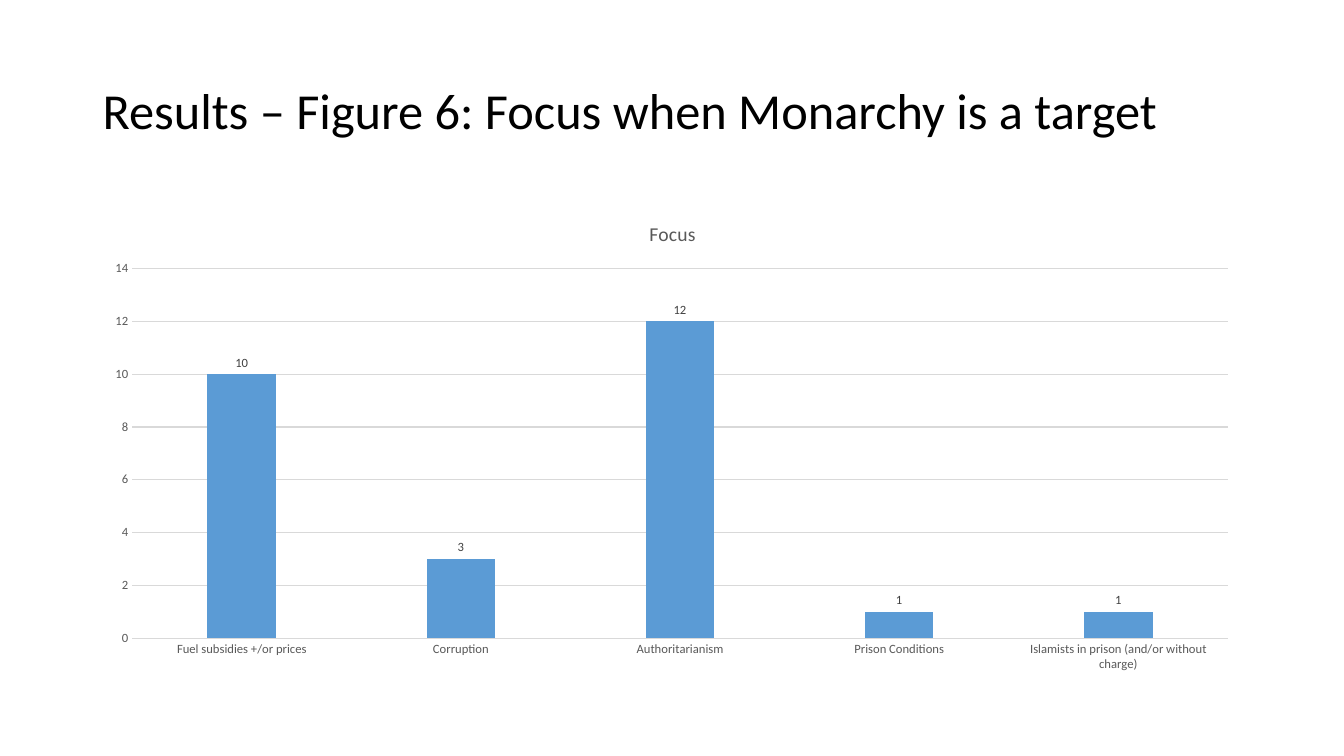
from lxml import etree
from pptx import Presentation
from pptx.chart.data import CategoryChartData
from pptx.dml.color import RGBColor
from pptx.enum import chart as ch, text as tx
from pptx.oxml.ns import qn
from pptx.util import Inches, Pt

BLACK = RGBColor(0x00, 0x00, 0x00)
LABEL_GRAY = RGBColor(0x40, 0x40, 0x40)
AXIS_GRAY = RGBColor(0x59, 0x59, 0x59)
GRID_GRAY = RGBColor(0xD9, 0xD9, 0xD9)
BAR_BLUE = RGBColor(0x5B, 0x9B, 0xD5)

FOCUS_COUNTS = {
    "Fuel subsidies +/or prices": 10,
    "Corruption": 3,
    "Authoritarianism": 12,
    "Prison Conditions": 1,
    "Islamists in prison (and/or without charge)": 1,
}
LEFT, WIDTH = Inches(0.92), Inches(11.5)


def style_font(font, size, color):
    font.name = "Calibri"
    font.size = Pt(size)
    font.bold = False
    font.color.rgb = color


def style_line(line):
    line.color.rgb = GRID_GRAY
    line.width = Pt(0.75)


prs = Presentation()
prs.slide_width, prs.slide_height = Inches(13.33), Inches(7.5)
slide = prs.slides.add_slide(prs.slide_layouts[6])

# Heading
heading = slide.shapes.add_textbox(LEFT, Inches(0.4), WIDTH, Inches(1.45)).text_frame
heading.word_wrap = True
heading.vertical_anchor = tx.MSO_ANCHOR.MIDDLE
heading.text = "Results – Figure 6: Focus when Monarchy is a target"
heading.paragraphs[0].line_spacing = 0.9
style_font(heading.paragraphs[0].runs[0].font, 36, BLACK)

# Focus chart
focus_data = CategoryChartData()
focus_data.categories = list(FOCUS_COUNTS)
focus_data.add_series("Series 1", list(FOCUS_COUNTS.values()))
focus = slide.shapes.add_chart(
    ch.XL_CHART_TYPE.COLUMN_CLUSTERED, LEFT, Inches(2), WIDTH, Inches(4.76), focus_data
).chart
style_font(focus.font, 10, BLACK)
focus.has_legend = False
focus.has_title = True
focus_title = focus.chart_title.text_frame
focus_title.text = "Focus"
style_font(focus_title.paragraphs[0].runs[0].font, 14, AXIS_GRAY)

# Bars and their values
plot = focus.plots[0]
plot.gap_width = 219
plot.overlap = -27
plot.vary_by_categories = False
bars = plot.series[0]
bars.format.fill.solid()
bars.format.fill.fore_color.rgb = BAR_BLUE
bar_labels = bars.data_labels
bar_labels.show_value = True
bar_labels.position = ch.XL_LABEL_POSITION.OUTSIDE_END
style_font(bar_labels.font, 9, LABEL_GRAY)

# Axes
for axis in (focus.category_axis, focus.value_axis):
    axis.major_tick_mark = axis.minor_tick_mark = ch.XL_TICK_MARK.NONE
    style_font(axis.tick_labels.font, 9, AXIS_GRAY)
style_line(focus.category_axis.format.line)
counts = focus.value_axis
counts.minimum_scale, counts.maximum_scale, counts.major_unit = 0, 14, 2
counts.format.line.fill.background()
style_line(counts.major_gridlines.format.line)

# Inner plot area, as fractions of the chart
plot_area = focus.element.find(".//" + qn("c:plotArea"))
layout = plot_area.find(qn("c:layout"))
if layout is None:
    layout = etree.Element(qn("c:layout"))
    plot_area.insert(0, layout)
manual = etree.SubElement(layout, qn("c:manualLayout"))
for tag, value in (("layoutTarget", "inner"), ("xMode", "edge"), ("yMode", "edge"),
                   ("x", "0.034"), ("y", "0.14"), ("w", "0.945"), ("h", "0.77")):
    etree.SubElement(manual, qn("c:" + tag)).set("val", value)

prs.save("out.pptx")
